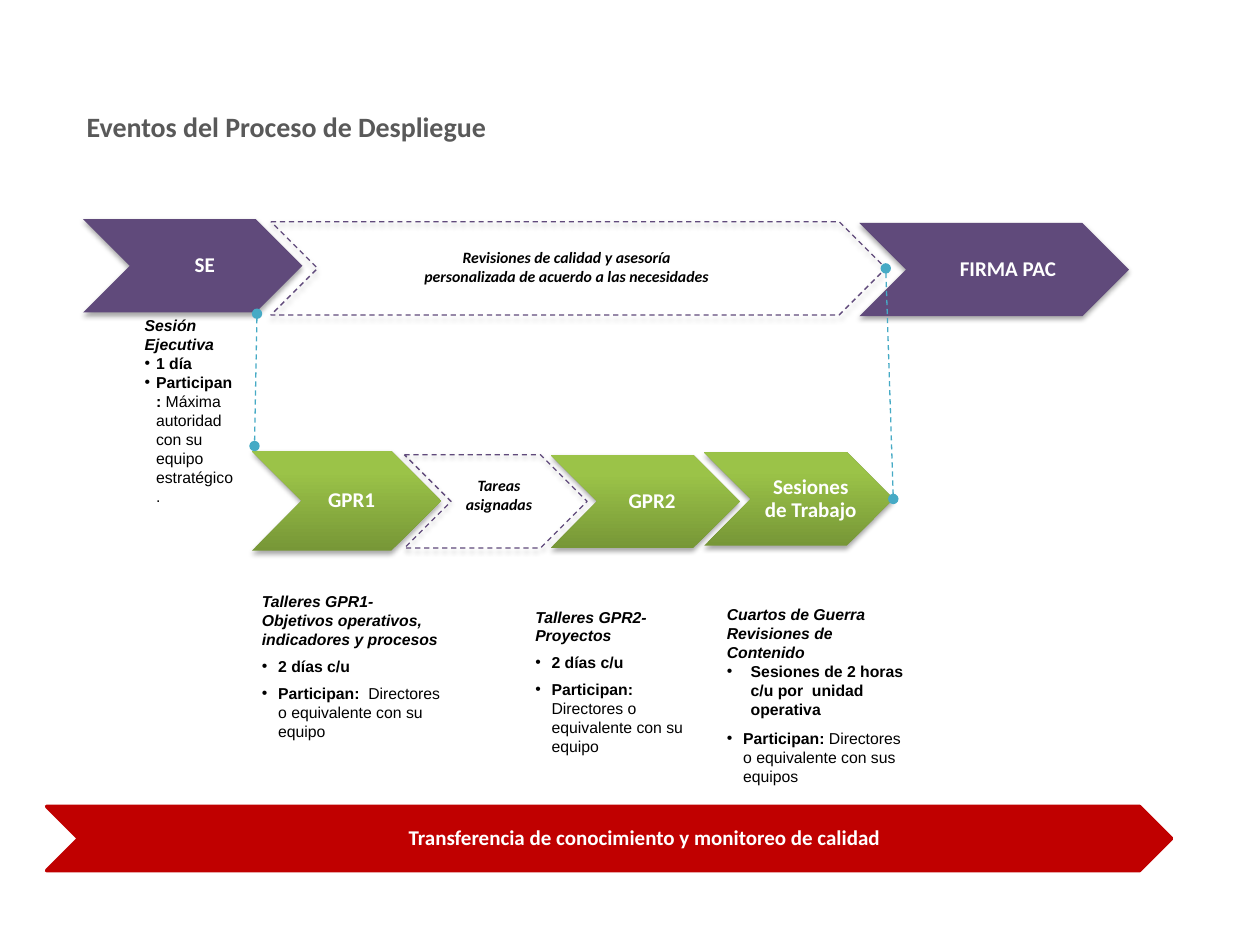
from lxml import etree
from pptx import Presentation
from pptx import util as u
from pptx.dml.color import RGBColor
from pptx.enum import dml, shapes, text
from pptx.oxml import ns

COLORS = {
    "purple": "604A7B", "green": "9BC348", "dark green": "779737",
    "red": "C00000", "blue": "46AAC5", "title": "595959",
    "white": "FFFFFF", "black": "000000",
}


def rgb(name):
    return RGBColor.from_string(COLORS[name])


def add_child(parent, tag, **attributes):
    return etree.SubElement(parent, ns.qn(tag), attributes)


def add_shadow(step):
    effects = step._element.spPr.find(ns.qn("a:effectLst"))
    shadow = add_child(effects, "a:outerShdw", blurRad=str(u.Pt(3.1)),
                       dist=str(u.Pt(1.8)), dir="5400000", rotWithShape="0")
    color = add_child(shadow, "a:srgbClr", val=COLORS["black"])
    add_child(color, "a:alpha", val="35000")


def add_chevron(slide, left, top, width, height, kind):
    step = slide.shapes.add_shape(shapes.MSO_SHAPE.CHEVRON,
                                  *map(u.Inches, (left, top, width, height)))
    step.shadow.inherit = False
    if kind == "dashed":
        step.fill.background()
        step.line.color.rgb = rgb("purple")
        step.line.width = u.Pt(0.75)
        step.line.dash_style = dml.MSO_LINE.DASH
    elif kind == "green":
        step.fill.gradient()
        step.fill.gradient_angle = 90
        dark, light = step.fill.gradient_stops
        dark.color.rgb, dark.position = rgb("dark green"), 0
        light.color.rgb, light.position = rgb("green"), 0.8
        step.line.fill.background()
    else:
        step.fill.solid()
        step.fill.fore_color.rgb = rgb(kind)
        step.line.fill.background()
    if kind == "red":
        step.line.color.rgb = rgb("red")
        step.line.width = u.Pt(2)
    else:
        add_shadow(step)


def add_frame(slide, left, top, width, height):
    frame = slide.shapes.add_textbox(
        *map(u.Inches, (left, top, width, height))).text_frame
    frame.word_wrap = True
    return frame


def style(run, size, font, color, bold=True, italic=False):
    run.font.size = u.Pt(size)
    run.font.name = font
    run.font.color.rgb = rgb(color)
    run.font.bold = bold
    run.font.italic = italic


def add_label(slide, left, top, width, height, words):
    """White caption centred on a chevron."""
    frame = add_frame(slide, left, top, width, height)
    frame.vertical_anchor = text.MSO_ANCHOR.MIDDLE
    frame.margin_left = u.Inches(0.08)
    frame.margin_top = frame.margin_right = frame.margin_bottom = u.Inches(0.03)
    frame.text = words
    caption = frame.paragraphs[0]
    caption.alignment = text.PP_ALIGN.CENTER
    caption.line_spacing = 0.9
    style(caption.runs[0], 12, "Calibri", "white")


def add_remark(slide, left, top, width, height, words):
    """Italic remark inside a dashed chevron."""
    frame = add_frame(slide, left, top, width, height)
    frame.text = words
    for line in frame.paragraphs:
        line.alignment = text.PP_ALIGN.CENTER
        style(line.runs[0], 9, "Calibri", "black", italic=True)


def add_details(slide, left, top, width, height, heading, bullets):
    """Italic heading, then bullets of (indent, space before, bold, plain)."""
    frame = add_frame(slide, left, top, width, height)
    frame.text = heading
    for line in frame.paragraphs:
        style(line.runs[0], 9, "Arial", "black", italic=True)
    for indent, space, strong, plain in bullets:
        item = frame.add_paragraph()
        item.space_before = u.Pt(space)
        props = item._p.get_or_add_pPr()
        props.set("marL", str(u.Inches(indent)))
        props.set("indent", str(-u.Inches(indent)))
        add_child(props, "a:buFont", typeface="Arial")
        add_child(props, "a:buChar", char="•")
        for words, bold in ((strong, True), (plain, False)):
            if words:
                run = item.add_run()
                run.text = words
                style(run, 9, "Arial", "black", bold)


def add_link(slide, *ends):
    link = slide.shapes.add_connector(shapes.MSO_CONNECTOR.STRAIGHT,
                                      *map(u.Inches, ends))
    link.line.color.rgb = rgb("blue")
    link.line.width = u.Pt(0.75)
    link.line.dash_style = dml.MSO_LINE.DASH
    line = link.line._get_or_add_ln()
    add_child(line, "a:headEnd", type="oval")
    add_child(line, "a:tailEnd", type="oval")
    add_child(link._element.spPr, "a:effectLst")


def main():
    prs = Presentation()
    prs.slide_width, prs.slide_height = u.Inches(10), u.Inches(7.5)
    slide = prs.slides.add_slide(prs.slide_layouts[6])

    # Title
    title = add_frame(slide, 0.59, 0.82, 7.04, 0.37)
    title.text = "Eventos del Proceso de Despliegue"
    style(title.paragraphs[0].runs[0], 16, "Calibri", "title")

    # Workshop details
    workshop = [(0.13, 4.5, "2 días c/u", ""),
                (0.13, 4.5, "Participan:", "  Directores o equivalente con su equipo")]
    add_details(slide, 1.98, 4.65, 1.67, 1.31,
                "Talleres GPR1- Objetivos operativos, indicadores y procesos", workshop)
    add_details(slide, 4.15, 4.77, 1.57, 1.32, "Talleres GPR2- Proyectos", workshop)
    add_details(slide, 5.67, 4.75, 1.63, 1.55,
                "Cuartos de Guerra\nRevisiones de Contenido",
                [(0.19, 0, "Sesiones de 2 horas c/u por  unidad operativa", ""),
                 (0.13, 6, "Participan:", " Directores o equivalente con sus equipos")])
    add_details(slide, 1.05, 2.46, 0.92, 1.62, "Sesión Ejecutiva",
                [(0.09, 0, "1 día", ""),
                 (0.09, 0, "Participan: ", "Máxima autoridad con su equipo estratégico.")])

    # Steps: chevron box, kind, caption left and width, caption
    steps = [
        (2, 3.58, 1.5, 0.79, "green", 2.27, 0.99, "GPR1"),
        (5.59, 3.59, 1.5, 0.74, "green", 5.96, 0.9, "Sesiones de Trabajo"),
        (4.37, 3.61, 1.5, 0.74, "green", 4.66, 0.98, "GPR2"),
        (0.66, 1.74, 1.74, 0.74, "purple", 0.91, 1.38, "SE"),
        (6.82, 1.77, 2.14, 0.74, "purple", 7.13, 1.69, "FIRMA PAC"),
        (0.37, 6.4, 8.93, 0.51, "red", 2.27, 5.64,
         "Transferencia de conocimiento y monitoreo de calidad"),
    ]
    for left, top, width, height, kind, label_left, label_width, words in steps:
        add_chevron(slide, left, top, width, height, kind)
        add_label(slide, label_left, top, label_width, height, words)

    # Dashed steps between the events
    add_chevron(slide, 3.21, 3.61, 1.45, 0.74, "dashed")
    add_remark(slide, 3.43, 3.73, 1.06, 0.4, "Tareas asignadas")
    add_chevron(slide, 2.15, 1.76, 4.88, 0.74, "dashed")
    add_remark(slide, 3.07, 1.92, 2.85, 0.4,
               "Revisiones de calidad y asesoría\n"
               "personalizada de acuerdo a las necesidades")

    # Links between the two rows
    add_link(slide, 2.04, 2.49, 2.02, 3.54)
    add_link(slide, 7.03, 2.13, 7.09, 3.96)

    prs.save("out.pptx")


if __name__ == "__main__":
    main()
